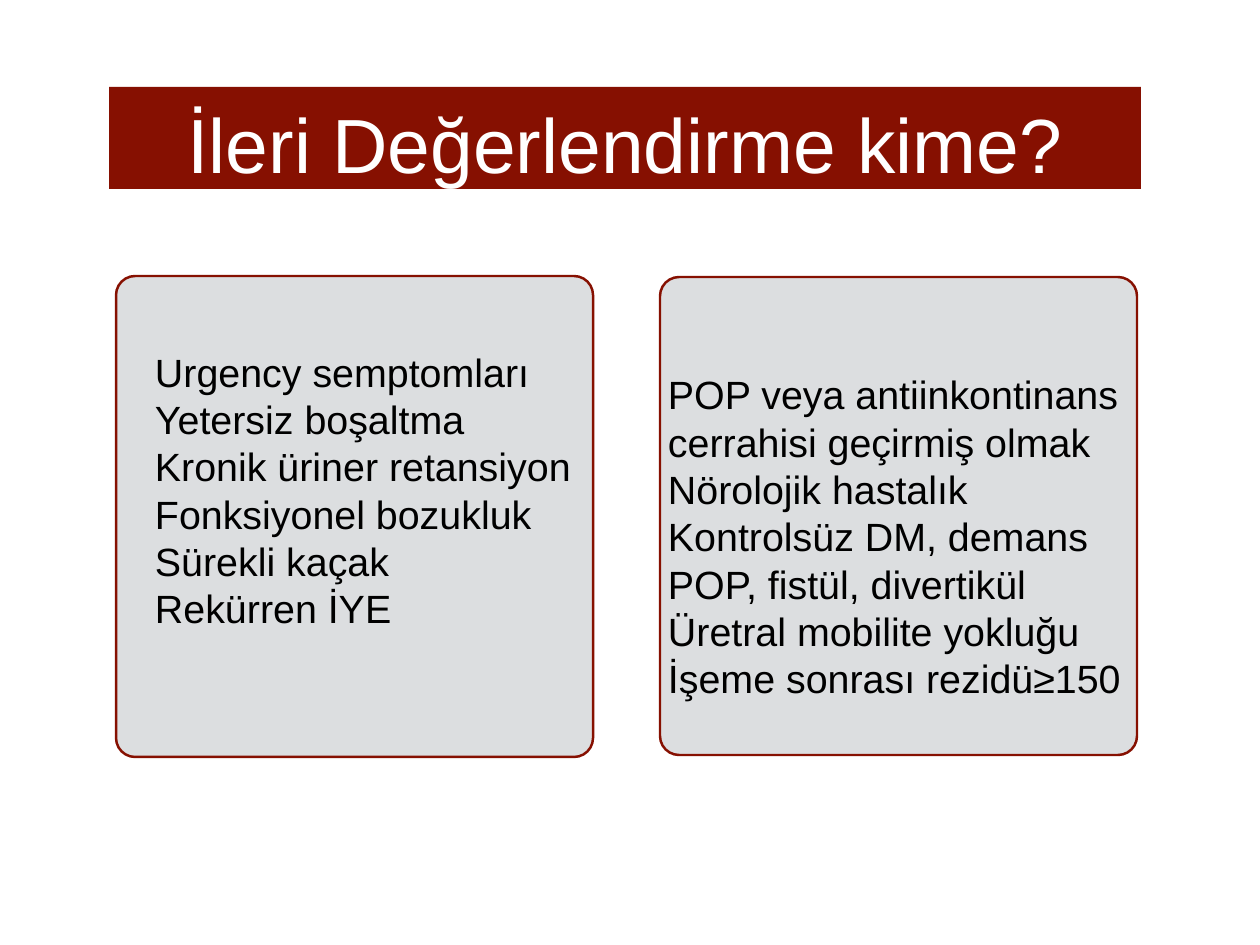
from pptx import Presentation
from pptx.dml.color import RGBColor
from pptx.enum.shapes import MSO_SHAPE as Shape
from pptx.enum.text import MSO_ANCHOR as Anchor, MSO_AUTO_SIZE as AutoSize, PP_ALIGN as Align
from pptx.oxml.xmlchemy import OxmlElement
from pptx.util import Pt

TITLE = "İleri Değerlendirme kime?"
TITLE_AREA = (109, 87, 1032, 102)
COLUMNS = [
    {
        "card": (116, 276, 477, 481),
        "area": (150, 343, 437, 367),
        "anchor": Anchor.TOP,
        "wrap": False,
        "lines": [
            "Urgency semptomları",
            "Yetersiz boşaltma",
            "Kronik üriner retansiyon",
            "Fonksiyonel bozukluk",
            "Sürekli kaçak",
            "Rekürren İYE",
        ],
    },
    {
        "card": (660, 277, 477, 478),
        "area": (663, 344, 478, 384),
        "anchor": Anchor.MIDDLE,
        "wrap": True,
        "lines": [
            "POP veya antiinkontinans cerrahisi geçirmiş olmak",
            "Nörolojik hastalık",
            "Kontrolsüz DM, demans",
            "POP, fistül, divertikül",
            "Üretral mobilite yokluğu",
            "İşeme sonrası rezidü≥150",
        ],
    },
]
RED, GREY, WHITE, BLACK = "861001", "DCDEE0", "FFFFFF", "000000"
SCALE = 914400 / 88.6


def px(length):
    return round(length * SCALE)


def color(value):
    return RGBColor.from_string(value)


def paint(shape, value):
    shape.fill.solid()
    shape.fill.fore_color.rgb = color(value)


def place(shape, area):
    shape.left, shape.top, shape.width, shape.height = map(px, area)


def write(shape, lines, *, size, ink, anchor, align=Align.LEFT, inset=0, wrap=True, leading=None):
    frame = shape.text_frame
    frame.text = "\n".join(lines)
    frame.auto_size = AutoSize.NONE
    frame.word_wrap = wrap
    frame.vertical_anchor = anchor
    frame.margin_left = frame.margin_right = px(inset)
    frame.margin_top = frame.margin_bottom = px(inset)
    for para in frame.paragraphs:
        para.alignment = align
        para.space_before = Pt(0)
        if leading:
            para.line_spacing = Pt(leading)
        properties = para._p.get_or_add_pPr()
        properties.set("marL", "0")
        properties.set("indent", "0")
        properties.append(OxmlElement("a:buNone"))
        for span in para.runs:
            span.font.name = "Arial"
            span.font.size = Pt(size)
            span.font.color.rgb = color(ink)


deck = Presentation()
deck.slide_width, deck.slide_height = px(1260), px(945)
page = deck.slides.add_slide(deck.slide_layouts[3])
title, *bodies = list(page.placeholders)[:3]

place(title, TITLE_AREA)
paint(title, RED)
write(title, [TITLE], size=62.4, ink=WHITE, anchor=Anchor.BOTTOM, align=Align.CENTER)

for column, body in zip(COLUMNS, bodies):
    card = page.shapes.add_shape(Shape.ROUNDED_RECTANGLE, *map(px, column["card"]))
    card.adjustments[0] = 0.04
    card.shadow.inherit = False
    paint(card, GREY)
    card.line.color.rgb = color(RED)
    card.line.width = Pt(2)
    body._element.addprevious(card._element)

    place(body, column["area"])
    write(body, column["lines"], size=32, ink=BLACK, anchor=column["anchor"],
          inset=5, wrap=column["wrap"], leading=38.4)

deck.save("out.pptx")
